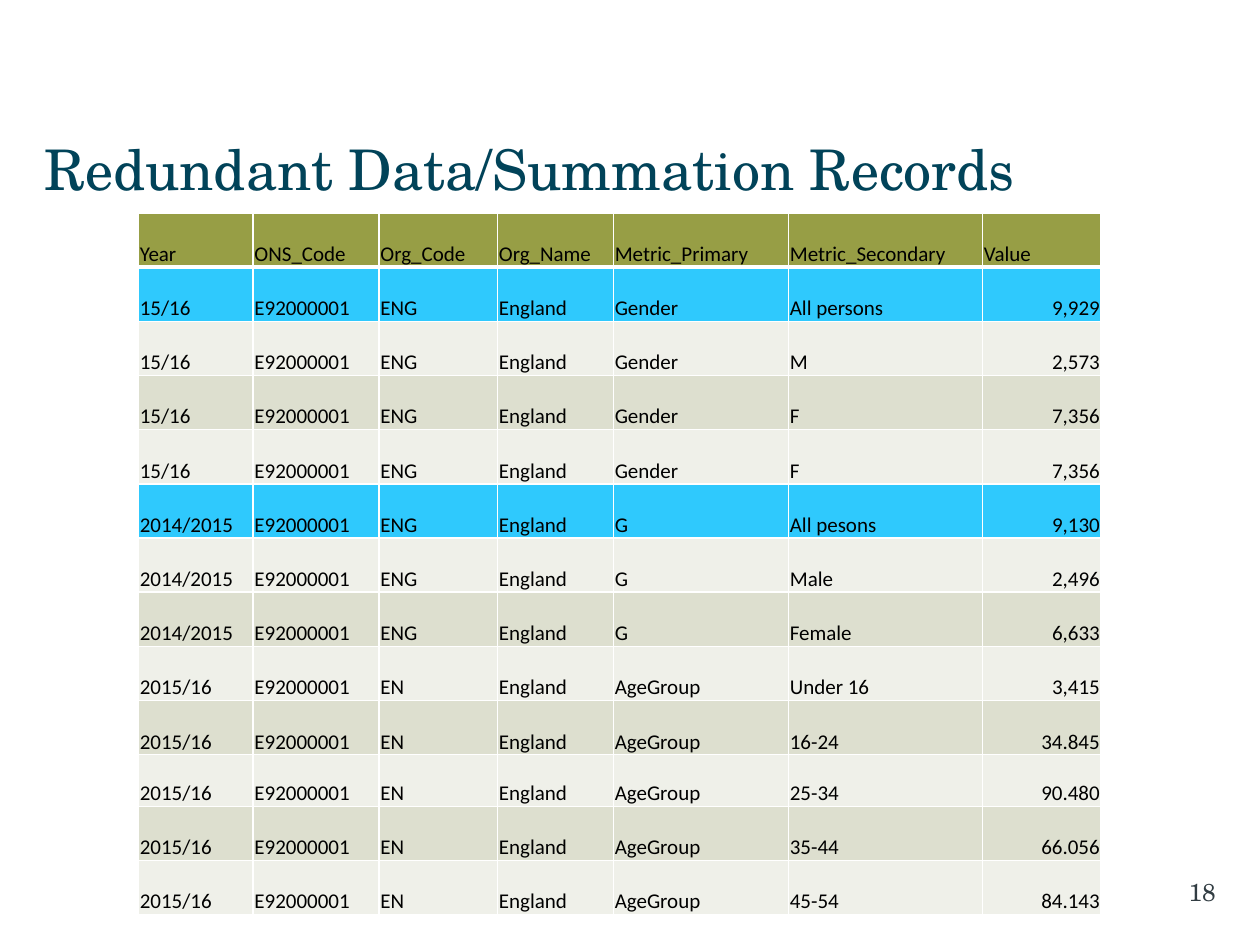
from dataclasses import dataclass

from lxml.etree import SubElement
from pptx import Presentation
from pptx.dml.color import RGBColor as Color
from pptx.enum.text import MSO_ANCHOR as Anchor, PP_ALIGN as Align
from pptx.oxml.ns import qn
from pptx.util import Inches, Pt


@dataclass(frozen=True)
class Theme:
    """Colours, fonts and type sizes of the deck."""
    title: str = "014359"
    number: str = "323D43"
    text: str = "000000"
    header: str = "979E45"
    total: str = "2FC9FD"
    light: str = "EFF0E9"
    dark: str = "DDDFCF"
    rule: str = "FFFFFF"
    serif: str = "TeX Gyre Schola"
    sans: str = "Calibri"
    title_size: int = 32
    number_size: int = 14
    cell_size: int = 12


HEADINGS = ["Year", "ONS_Code", "Org_Code", "Org_Name", "Metric_Primary", "Metric_Secondary", "Value"]
RECORDS = [
    ("15/16", "ENG", "Gender", "All persons", "9,929"),
    ("15/16", "ENG", "Gender", "M", "2,573"),
    ("15/16", "ENG", "Gender", "F", "7,356"),
    ("15/16", "ENG", "Gender", "F", "7,356"),
    ("2014/2015", "ENG", "G", "All pesons", "9,130"),
    ("2014/2015", "ENG", "G", "Male", "2,496"),
    ("2014/2015", "ENG", "G", "Female", "6,633"),
    ("2015/16", "EN", "AgeGroup", "Under 16", "3,415"),
    ("2015/16", "EN", "AgeGroup", "16-24", "34.845"),
    ("2015/16", "EN", "AgeGroup", "25-34", "90.480"),
    ("2015/16", "EN", "AgeGroup", "35-44", "66.056"),
    ("2015/16", "EN", "AgeGroup", "45-54", "84.143"),
]
COLUMN_WIDTHS = [0.91, 1, 0.94, 0.92, 1.39, 1.54, 0.94]
ROW_HEIGHTS = [0.43] * 10 + [0.41] + [0.43] * 2


class SlideBuilder:
    """Adds styled elements to the current slide."""

    def __init__(self, page, theme):
        self.page = page
        self.theme = theme

    def add_text(self, para, text, font, size, color, align=Align.LEFT):
        """Add one styled run to a paragraph."""
        para.alignment = align
        span = para.add_run()
        span.text = text
        span.font.name = font
        span.font.size = Pt(size)
        span.font.bold = False
        span.font.color.rgb = Color.from_string(color)

    def frame(self, box, left_inset, right_inset):
        """Set up the text frame of a box and return its first paragraph."""
        frame = box.text_frame
        frame.word_wrap = True
        frame.vertical_anchor = Anchor.MIDDLE
        frame.margin_left, frame.margin_right = Inches(left_inset), Inches(right_inset)
        frame.margin_top = frame.margin_bottom = Inches(0.05)
        return frame.paragraphs[0]

    def title(self, text):
        """Place and fill the title placeholder."""
        box = self.page.shapes.title
        box.left, box.top = Inches(0.35), Inches(0.98)
        box.width, box.height = Inches(9.29), Inches(0.71)
        para = self.frame(box, 0, 0.1)
        self.add_text(para, text, self.theme.serif, self.theme.title_size, self.theme.title)

    def page_number(self, text):
        """Add the page number at the lower right."""
        box = self.page.shapes.add_textbox(Inches(7.73), Inches(6.91), Inches(1.92), Inches(0.34))
        para = self.frame(box, 0.1, 0)
        self.add_text(para, text, self.theme.serif, self.theme.number_size, self.theme.number, Align.RIGHT)

    def borders(self, cell, top, bottom):
        """Draw the four rules of a cell, with widths in points."""
        properties = cell._tc.get_or_add_tcPr()
        for tag, width in (("a:lnL", 1), ("a:lnR", 1), ("a:lnT", top), ("a:lnB", bottom)):
            line = SubElement(properties, qn(tag), w=str(Pt(width)))
            fill = SubElement(line, qn("a:solidFill"))
            SubElement(fill, qn("a:srgbClr"), val=self.theme.rule)

    def cell(self, cell, text, fill, align, top, bottom):
        """Fill one table cell."""
        self.borders(cell, top, bottom)
        cell.fill.solid()
        cell.fill.fore_color.rgb = Color.from_string(fill)
        cell.vertical_anchor = Anchor.BOTTOM
        cell.margin_left = cell.margin_right = cell.margin_top = Inches(0.01)
        cell.margin_bottom = 0
        para = cell.text_frame.paragraphs[0]
        self.add_text(para, text, self.theme.sans, self.theme.cell_size, self.theme.text, align)

    def row_fill(self, index, row):
        """Choose the colour of a row: header, total or band."""
        if index == 0:
            return self.theme.header
        if any(text.startswith("All ") for text in row):
            return self.theme.total
        return self.theme.dark if index % 2 else self.theme.light

    def table(self, rows):
        """Add the table of records."""
        shape = self.page.shapes.add_table(
            len(rows), len(COLUMN_WIDTHS), Inches(1.1), Inches(1.69),
            Inches(sum(COLUMN_WIDTHS)), Inches(sum(ROW_HEIGHTS)))
        table = shape.table
        table.horz_banding = False
        for column, width in zip(table.columns, COLUMN_WIDTHS):
            column.width = Inches(width)
        for index, (row, height) in enumerate(zip(rows, ROW_HEIGHTS)):
            table.rows[index].height = Inches(height)
            fill = self.row_fill(index, row)
            top, bottom = 3 if index == 1 else 1, 3 if index == 0 else 1
            for place, text in enumerate(row):
                is_value = index > 0 and place == len(row) - 1
                align = Align.RIGHT if is_value else Align.LEFT
                self.cell(table.cell(index, place), text, fill, align, top, bottom)


def main():
    """Build the slide and save the deck."""
    deck = Presentation()
    deck.slide_width, deck.slide_height = Inches(10), Inches(7.5)
    builder = SlideBuilder(deck.slides.add_slide(deck.slide_layouts[5]), Theme())
    builder.page_number("18")
    builder.table([HEADINGS] + [
        [year, "E92000001", code, "England", primary, secondary, value]
        for year, code, primary, secondary, value in RECORDS])
    builder.title("Redundant Data/Summation Records")
    deck.save("out.pptx")


if __name__ == "__main__":
    main()
